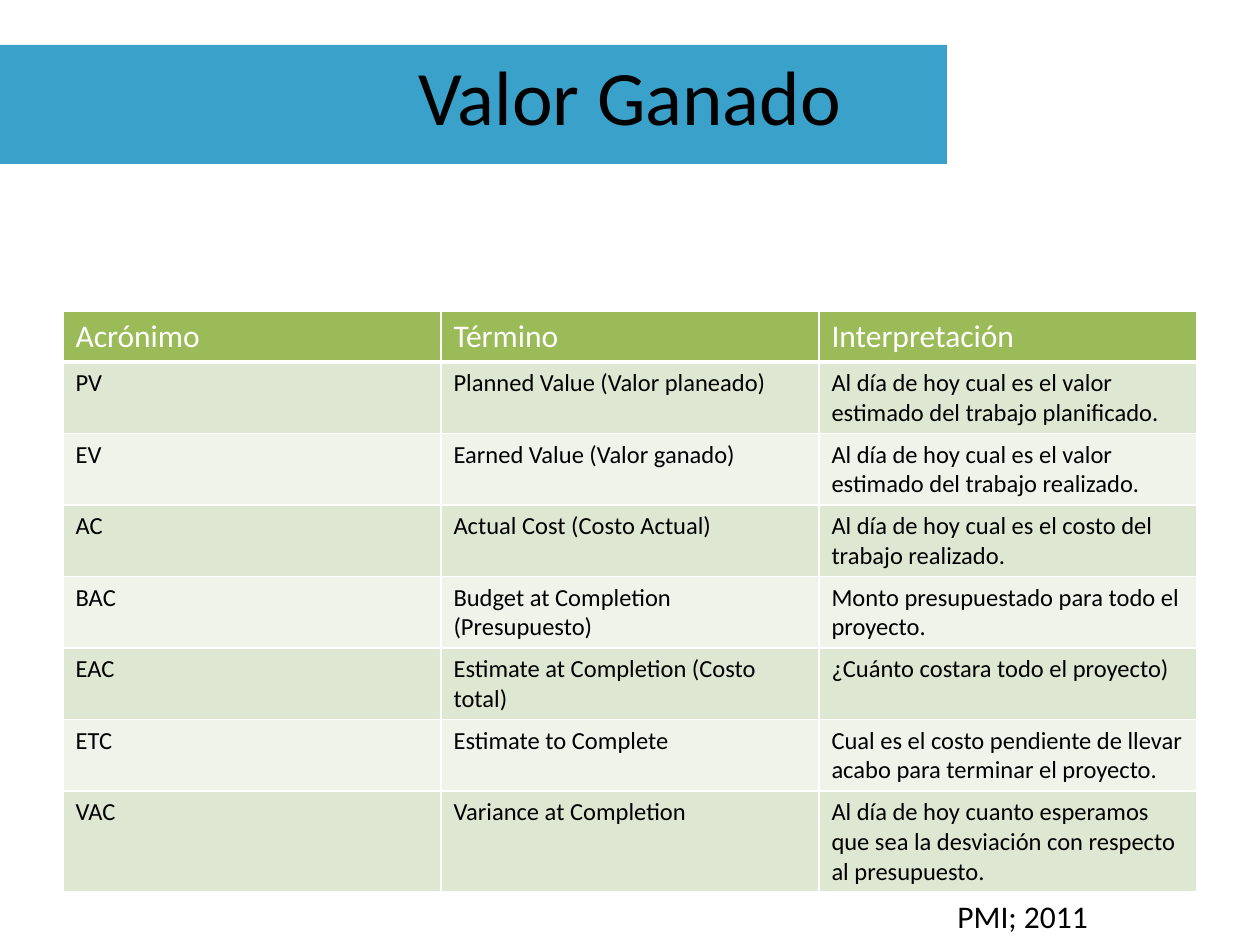
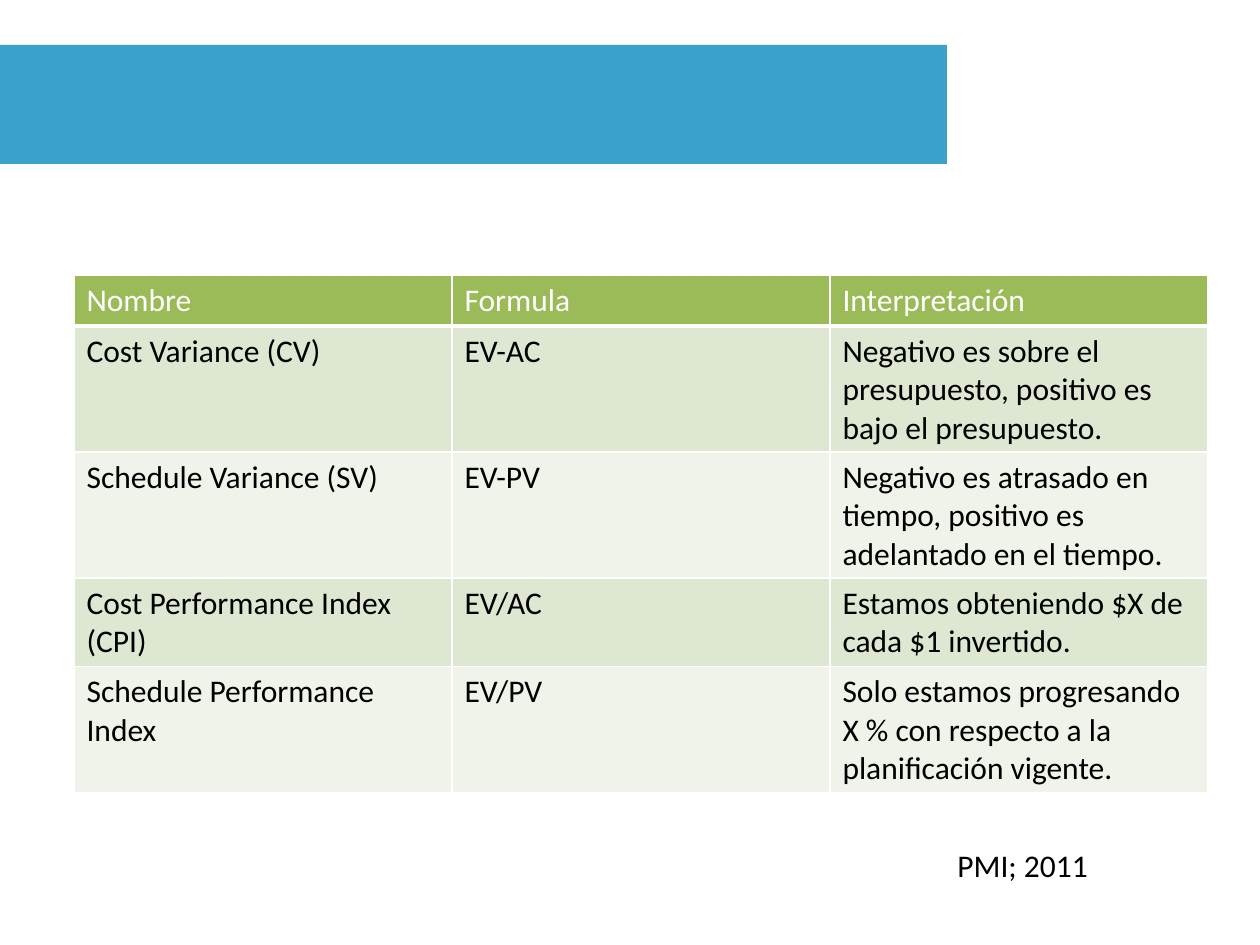
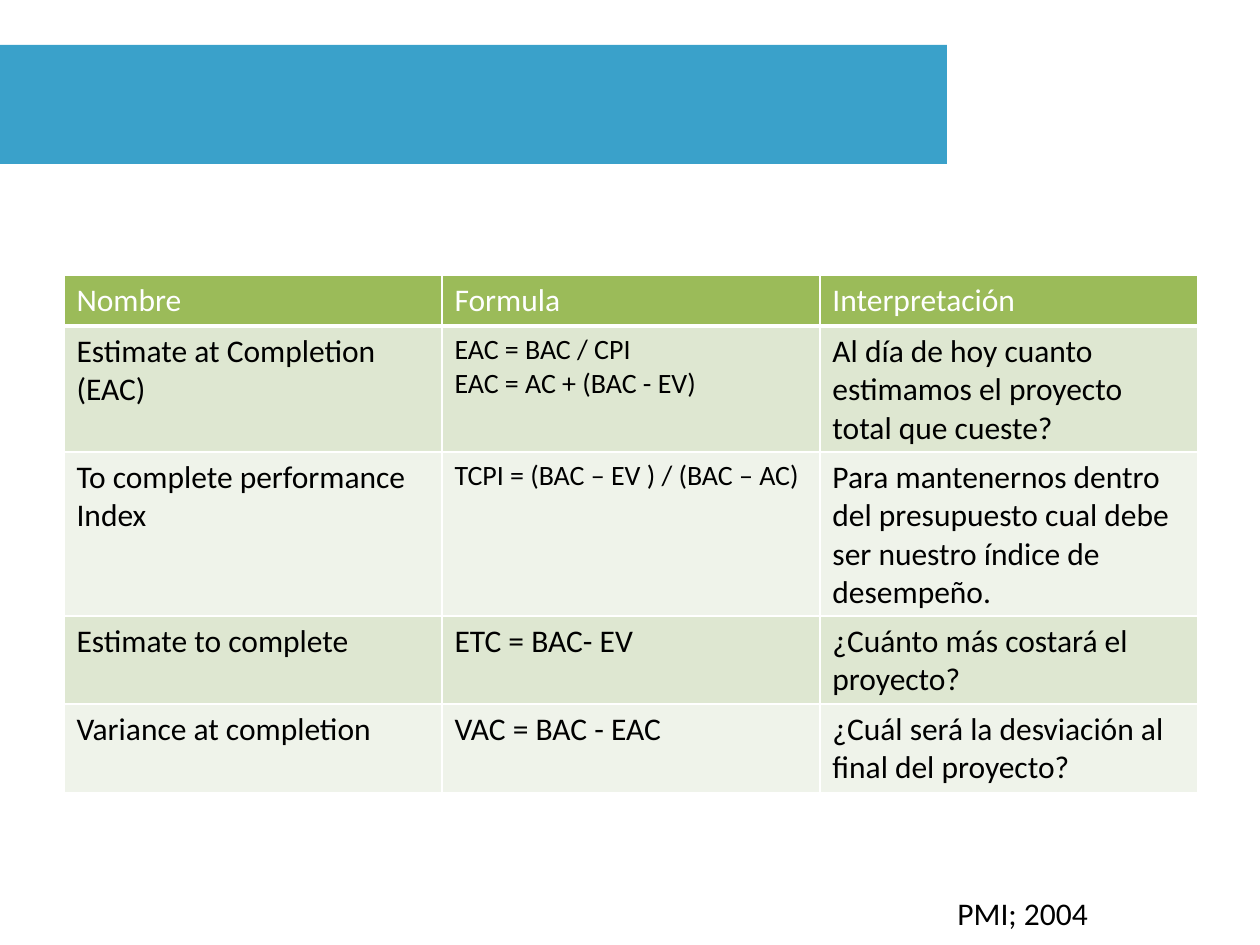
from lxml import etree
from pptx import Presentation
from pptx.dml.color import RGBColor
from pptx.enum.shapes import MSO_SHAPE
from pptx.enum.text import MSO_ANCHOR, PP_ALIGN
from pptx.oxml.ns import qn
from pptx.util import Emu, Pt

RECTANGLE = MSO_SHAPE.RECTANGLE
TOP = MSO_ANCHOR.TOP
LEFT, CENTER = PP_ALIGN.LEFT, PP_ALIGN.CENTER

BLACK = RGBColor(0x00, 0x00, 0x00)
WHITE = RGBColor(0xFF, 0xFF, 0xFF)
BAND_BLUE = RGBColor(0x3A, 0xA1, 0xCA)
HEADER_GREEN = RGBColor(0x9B, 0xBB, 0x59)
ROW_GREENS = (RGBColor(0xDE, 0xE7, 0xD1), RGBColor(0xEF, 0xF3, 0xEA))

FONT = "Calibri"
TITLE_SIZE, TEXT_SIZE = 44, 18
EMU_PER_PX = 914400 // 126
PAGE_WIDTH, PAGE_HEIGHT = 1260, 945
BAND_BOX = (0, 45, 947, 119)
TITLE_BOX = (63, 38, 1134, 157)
TITLE_INSET = 10
ROW_HEIGHT = 51
THIN_LINE, HEADER_LINE = 1, 3

ACRONYMS = [
    ("Acrónimo", "Término", "Interpretación"),
    ("PV", "Planned Value (Valor planeado)",
     "Al día de hoy cual es el valor estimado del trabajo planificado."),
    ("EV", "Earned Value (Valor ganado)",
     "Al día de hoy cual es el valor estimado del trabajo realizado."),
    ("AC", "Actual Cost (Costo Actual)",
     "Al día de hoy cual es el costo del trabajo realizado."),
    ("BAC", "Budget at Completion (Presupuesto)",
     "Monto presupuestado para todo el proyecto."),
    ("EAC", "Estimate at Completion (Costo total)",
     "¿Cuánto costara todo el proyecto)"),
    ("ETC", "Estimate to Complete",
     "Cual es el costo pendiente de llevar acabo para terminar el proyecto."),
    ("VAC", "Variance at Completion",
     "Al día de hoy cuanto esperamos que sea la desviación con respecto al presupuesto."),
]
VARIANCES = [
    ("Nombre", "Formula", "Interpretación"),
    ("Cost Variance (CV)", "EV-AC",
     "Negativo es sobre el presupuesto, positivo es bajo el presupuesto."),
    ("Schedule Variance (SV)", "EV-PV",
     "Negativo es atrasado en tiempo, positivo es adelantado en el tiempo."),
    ("Cost Performance Index (CPI)", "EV/AC",
     "Estamos obteniendo $X de cada $1 invertido."),
    ("Schedule Performance Index", "EV/PV",
     "Solo estamos progresando X % con respecto a la planificación vigente."),
]
FORECASTS = [
    ("Nombre", "Formula", "Interpretación"),
    ("Estimate at Completion (EAC)", "EAC = BAC / CPI\nEAC = AC + (BAC - EV)",
     "Al día de hoy cuanto estimamos el proyecto total que cueste?"),
    ("To complete performance Index", "TCPI = (BAC – EV ) / (BAC – AC)",
     "Para mantenernos dentro del presupuesto cual debe ser nuestro índice de desempeño."),
    ("Estimate to complete", "ETC = BAC- EV", "¿Cuánto más costará el proyecto?"),
    ("Variance at completion", "VAC = BAC - EAC",
     "¿Cuál será la desviación al final del proyecto?"),
]


def px(length):
    """Turn a length in px into EMU."""
    return Emu(length * EMU_PER_PX)


def scaled(box):
    """Turn a box in px into EMU."""
    return [px(length) for length in box]


def write(frame, text, size, color=BLACK, align=LEFT):
    """Fill a text frame, one paragraph for each line of text."""
    frame.text = text
    for para in frame.paragraphs:
        para.alignment = align
        para.font.name = FONT
        para.font.size = Pt(size)
        para.font.color.rgb = color


def add_band(page, box):
    """Draw the blue band behind the title."""
    band = page.shapes.add_shape(RECTANGLE, *scaled(box))
    band.shadow.inherit = False
    band.fill.solid()
    band.fill.fore_color.rgb = BAND_BLUE
    band.line.fill.background()


def add_text(page, box, text, size, align=LEFT):
    """Add a wrapping text box and return its frame."""
    frame = page.shapes.add_textbox(*scaled(box)).text_frame
    frame.word_wrap = True
    frame.vertical_anchor = TOP
    write(frame, text, size, align=align)
    return frame


def add_borders(cell, bottom_width):
    """Give a cell white borders, placed before its fill."""
    properties = cell._tc.get_or_add_tcPr()
    widths = {"a:lnL": THIN_LINE, "a:lnR": THIN_LINE,
              "a:lnT": THIN_LINE, "a:lnB": bottom_width}
    for position, (tag, width) in enumerate(widths.items()):
        line = etree.Element(qn(tag), w=str(Pt(width)))
        fill = etree.SubElement(line, qn("a:solidFill"))
        etree.SubElement(fill, qn("a:srgbClr"), val=str(WHITE))
        properties.insert(position, line)


def add_grid(page, box, rows, body_size, sizes):
    """Add a table with a green header and alternating row fills."""
    holder = page.shapes.add_table(len(rows), len(rows[0]), *scaled(box))
    table = holder.table
    table.horz_banding = False
    for row_index, texts in enumerate(rows):
        table.rows[row_index].height = px(ROW_HEIGHT)
        is_header = row_index == 0
        for column_index, text in enumerate(texts):
            cell = table.cell(row_index, column_index)
            cell.fill.solid()
            if is_header:
                cell.fill.fore_color.rgb = HEADER_GREEN
                write(cell.text_frame, text, TEXT_SIZE, WHITE)
            else:
                cell.fill.fore_color.rgb = ROW_GREENS[(row_index - 1) % 2]
                size = sizes.get((row_index, column_index), body_size)
                write(cell.text_frame, text, size)
            add_borders(cell, HEADER_LINE if is_header else THIN_LINE)
    holder.height = px(box[3])


def add_table_page(deck, rows, grid_box, source, source_top,
                   title=None, body_size=TEXT_SIZE, sizes=None):
    """Add a page with band, optional title, table and source."""
    page = deck.slides.add_slide(deck.slide_layouts[6])
    add_band(page, BAND_BOX)
    if title:
        frame = add_text(page, TITLE_BOX, title, TITLE_SIZE, CENTER)
        frame.margin_top = px(TITLE_INSET)
    add_grid(page, grid_box, rows, body_size, sizes or {})
    add_text(page, (945, source_top, 242, 50), source, TEXT_SIZE)


def main():
    """Build the deck and save it."""
    deck = Presentation()
    deck.slide_width, deck.slide_height = px(PAGE_WIDTH), px(PAGE_HEIGHT)
    add_table_page(deck, ACRONYMS, (63, 311, 1134, 581), "PMI; 2011", 891,
                   title="Valor Ganado", body_size=14)
    add_table_page(deck, VARIANCES, (74, 275, 1134, 518), "PMI; 2011", 840)
    add_table_page(deck, FORECASTS, (64, 275, 1134, 518), "PMI; 2004", 888,
                   sizes={(1, 1): 16, (2, 1): 16})
    deck.save("out.pptx")


if __name__ == "__main__":
    main()
